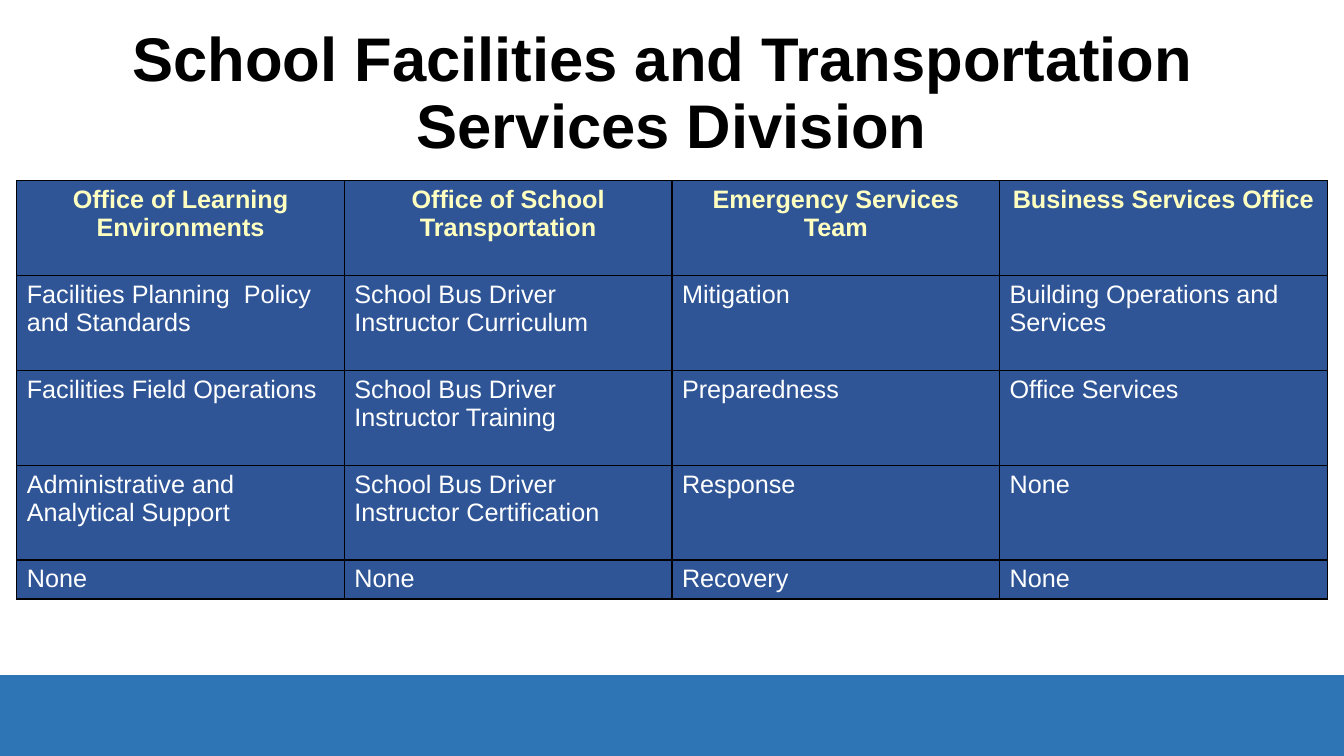
from dataclasses import dataclass

from lxml import etree
from pptx import Presentation
from pptx.dml.color import RGBColor
from pptx.enum import shapes, text
from pptx.oxml import ns
from pptx.util import Pt

BLACK = RGBColor(0x00, 0x00, 0x00)
WHITE = RGBColor(0xFF, 0xFF, 0xFF)
CREAM = RGBColor(0xFF, 0xFF, 0xC0)
NAVY = RGBColor(0x2F, 0x55, 0x97)
BLUE = RGBColor(0x2E, 0x75, 0xB6)

FONT = "Arial"
PAGE_WIDTH, PAGE_HEIGHT = 960, 540
BAND_HEIGHT = 57.8
MARGIN = 12
COLUMN_WIDTH = 234
TALL_ROW, SHORT_ROW = 67.75, 27.9


@dataclass
class Office:
    name: str
    duties: list[str]


OFFICES = [
    Office("Office of Learning Environments", [
        "Facilities Planning  Policy and Standards",
        "Facilities Field Operations",
        "Administrative and Analytical Support",
        "None",
    ]),
    Office("Office of School Transportation", [
        "School Bus Driver Instructor Curriculum",
        "School Bus Driver Instructor Training",
        "School Bus Driver Instructor Certification",
        "None",
    ]),
    Office("Emergency Services Team", [
        "Mitigation", "Preparedness", "Response", "Recovery",
    ]),
    Office("Business Services Office", [
        "Building Operations and Services", "Office Services", "None", "None",
    ]),
]


def style_font(font, size: float, color: RGBColor, bold: bool) -> None:
    font.name = FONT
    font.size = Pt(size)
    font.bold = bold
    font.color.rgb = color


def add_borders(cell) -> None:
    properties = cell._tc.get_or_add_tcPr()
    for side in ("lnL", "lnR", "lnT", "lnB"):
        line = etree.SubElement(properties, ns.qn(f"a:{side}"), w=str(Pt(1)))
        fill = etree.SubElement(line, ns.qn("a:solidFill"))
        etree.SubElement(fill, ns.qn("a:srgbClr"), val=str(BLACK))


def fill_cell(cell, words: str, is_header: bool) -> None:
    add_borders(cell)
    cell.fill.solid()
    cell.fill.fore_color.rgb = NAVY
    cell.text = words
    para = cell.text_frame.paragraphs[0]
    para.alignment = text.PP_ALIGN.CENTER if is_header else text.PP_ALIGN.LEFT
    style_font(para.font, 18, CREAM if is_header else WHITE, is_header)


def add_band(page) -> None:
    band = page.shapes.add_shape(
        shapes.MSO_SHAPE.RECTANGLE, Pt(0), Pt(PAGE_HEIGHT - BAND_HEIGHT),
        Pt(PAGE_WIDTH), Pt(BAND_HEIGHT))
    band.shadow.inherit = False
    band.fill.solid()
    band.fill.fore_color.rgb = BLUE
    band.line.fill.background()


def set_title(page) -> None:
    title = page.shapes.title
    title.left, title.top = Pt(MARGIN), Pt(15.8)
    title.width, title.height = Pt(936), Pt(104.4)
    frame = title.text_frame
    frame.text = "School Facilities and Transportation \vServices Division"
    frame.word_wrap = True
    frame.auto_size = text.MSO_AUTO_SIZE.NONE
    frame.vertical_anchor = text.MSO_ANCHOR.MIDDLE
    para = frame.paragraphs[0]
    para.alignment = text.PP_ALIGN.CENTER
    para.line_spacing = 0.9
    style_font(para.font, 44, BLACK, True)


def add_office_table(page, offices: list[Office]) -> None:
    heights = [TALL_ROW] * len(offices[0].duties) + [SHORT_ROW]
    table = page.shapes.add_table(
        len(heights), len(offices), Pt(MARGIN), Pt(129),
        Pt(COLUMN_WIDTH * len(offices)), Pt(sum(heights))).table
    table.horz_banding = False
    for row, height in zip(table.rows, heights):
        row.height = Pt(height)
    for column, office in enumerate(offices):
        table.columns[column].width = Pt(COLUMN_WIDTH)
        for row, words in enumerate([office.name, *office.duties]):
            fill_cell(table.cell(row, column), words, row == 0)


def main() -> None:
    deck = Presentation()
    deck.slide_width, deck.slide_height = Pt(PAGE_WIDTH), Pt(PAGE_HEIGHT)
    page = deck.slides.add_slide(deck.slide_layouts.get_by_name("Title Only"))

    # Bottom band
    add_band(page)
    # Heading
    set_title(page)
    # Offices and their duties
    add_office_table(page, OFFICES)

    deck.save("out.pptx")


if __name__ == "__main__":
    main()
